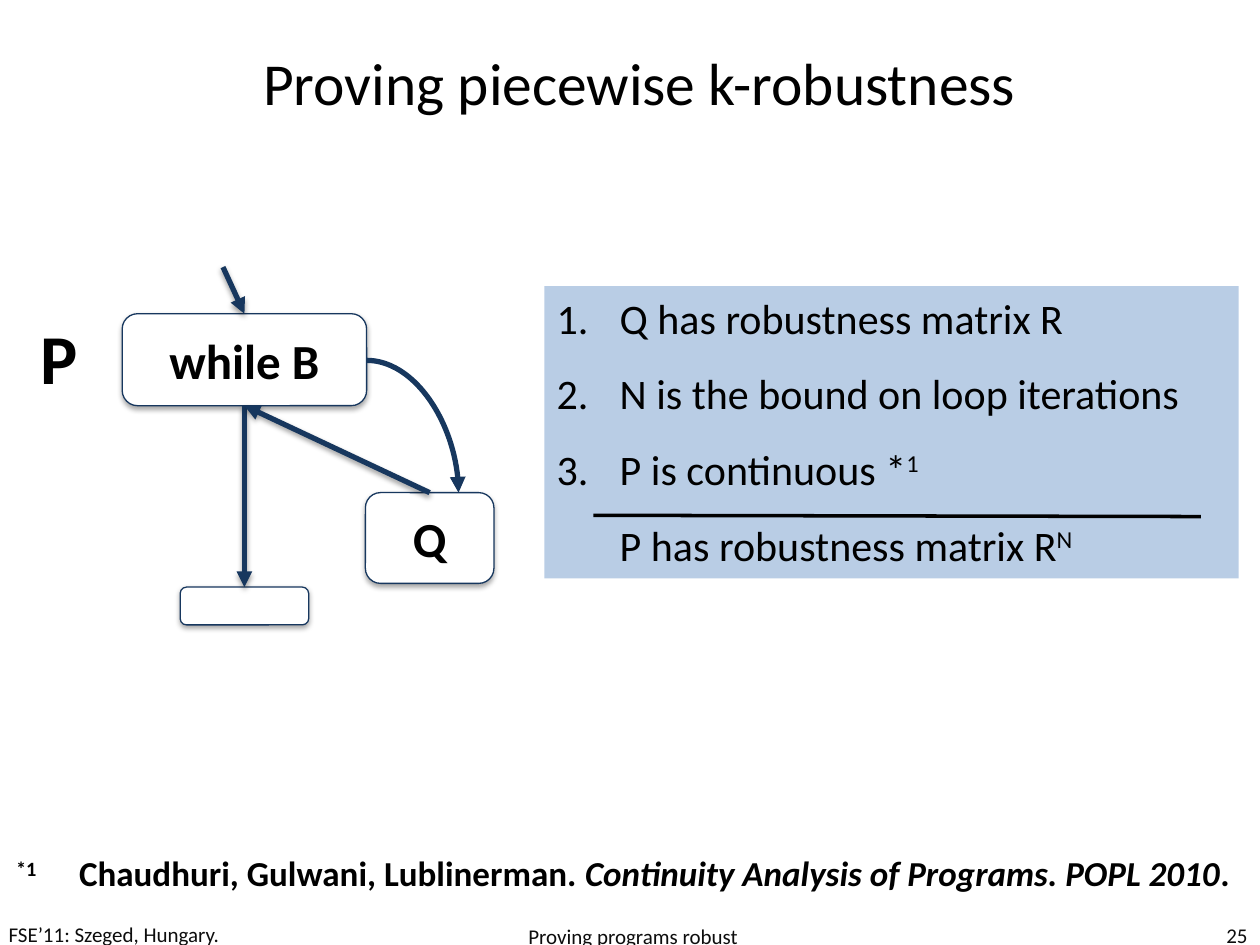
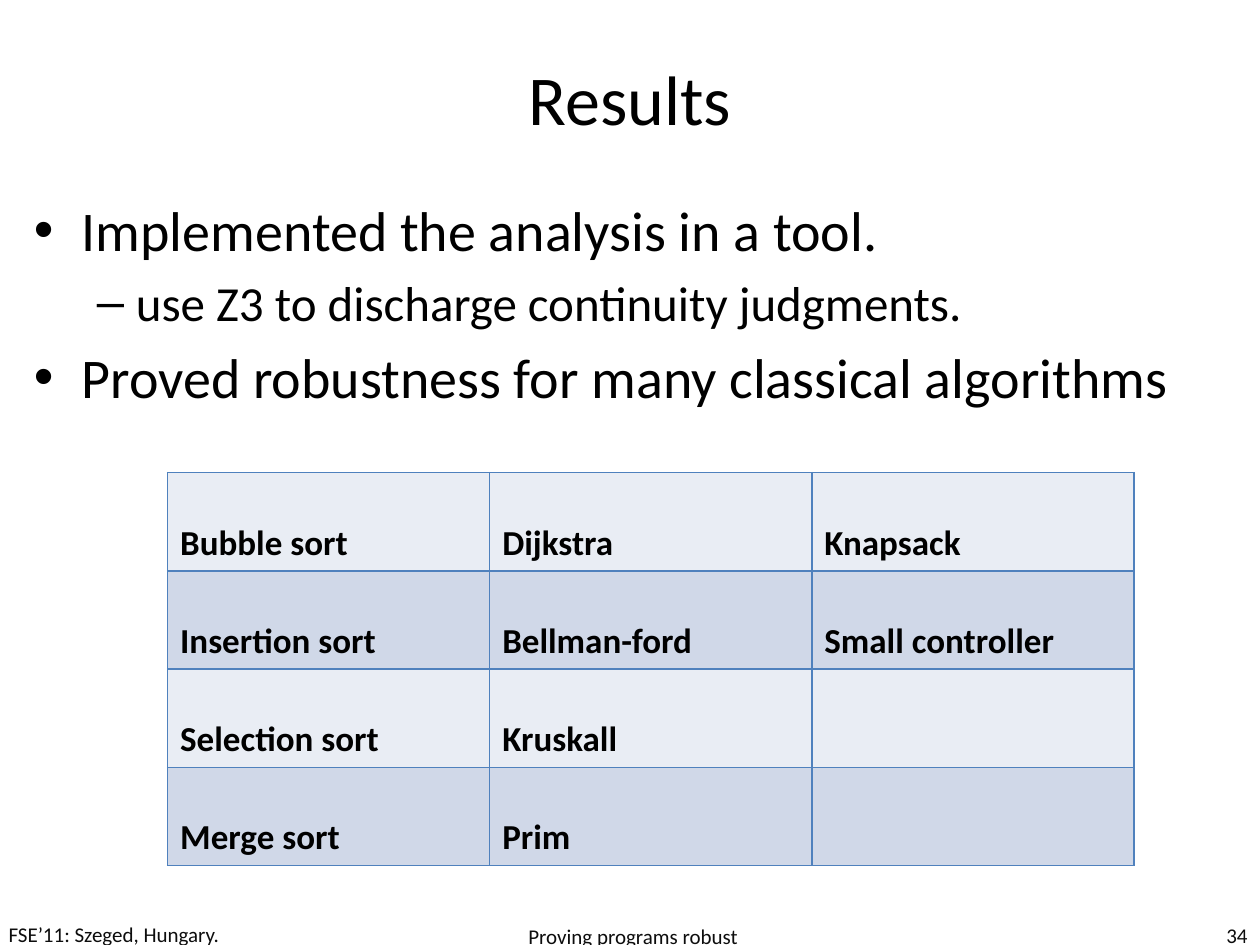
from lxml.etree import SubElement
from pptx import Presentation
from pptx.dml.color import RGBColor
from pptx.enum.shapes import MSO_CONNECTOR as Link, MSO_SHAPE as Shape
from pptx.enum.text import MSO_ANCHOR as Anchor, PP_ALIGN as Align
from pptx.oxml import parse_xml
from pptx.oxml.ns import nsdecls, qn
from pptx.util import Inches, Pt

FONT = "Calibri"
BLACK, WHITE, NAVY = "000000", "FFFFFF", "17375E"
FOOTER_INK, PANEL, GRID = "0D0D0D", "B9CDE5", "4F81BD"
BANDS = ("E9EDF4", "D0D8E8")
SUPER = "30000"
ALGORITHMS = (
    ("Bubble sort", "Dijkstra", "Knapsack"),
    ("Insertion sort", "Bellman-ford", "Small controller"),
    ("Selection sort", "Kruskall", ""),
    ("Merge sort", "Prim", ""),
)


def color(value):
    """Turn a hex string into a colour."""
    return RGBColor.from_string(value)


def style(paragraph, size, bold=False, ink=BLACK, align=Align.LEFT):
    """Set the font and alignment of a paragraph."""
    font = paragraph.font
    font.name, font.size, font.bold = FONT, Pt(size), bold
    font.color.rgb = color(ink)
    paragraph.alignment = align


def add_text(slide, box, text="", size=12, anchor=Anchor.TOP, wrap=True, **look):
    """Add a text box with one styled paragraph and return it."""
    label = slide.shapes.add_textbox(*map(Inches, box))
    frame = label.text_frame
    frame.word_wrap, frame.vertical_anchor = wrap, anchor
    frame.paragraphs[0].text = text
    style(frame.paragraphs[0], size, **look)
    return label


def add_superscript(paragraph, text):
    """Append a raised run to a paragraph."""
    run = paragraph.add_run()
    run.text = text
    run.font._element.set("baseline", SUPER)


def set_indent(paragraph, left, first=0.0, bullet=None, numbered=False):
    """Set a paragraph's indents and its bullet or number."""
    props = paragraph._p.get_or_add_pPr()
    props.set("marL", str(Inches(left)))
    props.set("indent", str(Inches(first)))
    if numbered:
        SubElement(props, qn("a:buAutoNum"), type="arabicPeriod")
    elif bullet:
        SubElement(props, qn("a:buFont"), typeface="Arial")
        SubElement(props, qn("a:buChar"), char=bullet)


def set_shadow(shape, opacity=None):
    """Give a shape a soft drop shadow, or none without an opacity."""
    effects = SubElement(shape._element.spPr, qn("a:effectLst"))
    if opacity:
        shadow = SubElement(effects, qn("a:outerShdw"), blurRad=str(Pt(3.1)),
                            dist=str(Pt(1.7)), dir="5400000", rotWithShape="0")
        ink = SubElement(shadow, qn("a:srgbClr"), val=BLACK)
        SubElement(ink, qn("a:alpha"), val=str(opacity * 1000))


def add_line(slide, start, end, ink=NAVY, width=3, arrow=True, kind=Link.STRAIGHT, shadow=None):
    """Add a connector between two points and return it."""
    line = slide.shapes.add_connector(kind, *map(Inches, (*start, *end)))
    line.line.color.rgb, line.line.width = color(ink), Pt(width)
    if arrow:
        SubElement(line.line._get_or_add_ln(), qn("a:tailEnd"), type="triangle")
    set_shadow(line, shadow)
    return line


def add_node(slide, box, text=""):
    """Add a rounded flowchart node and return it."""
    node = slide.shapes.add_shape(Shape.ROUNDED_RECTANGLE, *map(Inches, box))
    node.fill.solid()
    node.fill.fore_color.rgb = color(WHITE)
    node.line.color.rgb, node.line.width = color(NAVY), Pt(0.75)
    set_shadow(node, 35)
    if text:
        frame = node.text_frame
        frame.vertical_anchor = Anchor.MIDDLE
        frame.margin_left = frame.margin_right = Inches(0.05)
        frame.paragraphs[0].text = text
        style(frame.paragraphs[0], 28, bold=True, align=Align.CENTER)
    return node


def add_title(slide, box, text, size):
    """Add the centred slide title."""
    add_text(slide, box, text, size, Anchor.MIDDLE, align=Align.CENTER)


def add_footer(slide, number):
    """Add venue, talk title and slide number at the bottom."""
    parts = (
        (-0.03, 2.33, 0.17, "FSE’11: Szeged, Hungary.", Align.LEFT),
        (3.44, 3.17, 0.2, "Proving programs robust", Align.CENTER),
        (7.67, 2.33, 0.18, str(number), Align.RIGHT),
    )
    for left, width, height, text, align in parts:
        add_text(slide, (left, 7.33, width, height), text, 12, Anchor.MIDDLE,
                 ink=FOOTER_INK, align=align)


def add_loop_diagram(slide, left, top):
    """Draw the control flow of program P with its loop body Q."""
    def at(x, y, *size):
        return (left + x, top + y, *size)

    loop = add_node(slide, at(0.75, 0.37, 1.94, 0.73), "while B")
    body = add_node(slide, at(2.68, 1.79, 1.02, 0.72), "Q")
    done = add_node(slide, at(1.21, 2.54, 1.02, 0.3))
    add_text(slide, at(0, 0.33, 0.5, 0.77), "P", 40, wrap=False, bold=True, align=Align.CENTER)

    entry = add_line(slide, at(1.55, 0), at(1.72, 0.37), shadow=38)
    entry.end_connect(loop, 0)
    leave = add_line(slide, at(1.72, 1.1), at(1.72, 2.54), shadow=38)
    leave.begin_connect(loop, 2)
    leave.end_connect(done, 0)
    back = add_line(slide, at(3.19, 1.79), at(1.72, 1.1), shadow=38)
    back.begin_connect(body, 0)
    back.end_connect(loop, 2)
    enter_body = add_line(slide, at(2.69, 0.74), at(3.42, 1.79), kind=Link.CURVE)
    enter_body._element.spPr.find(qn("a:prstGeom")).set("prst", "curvedConnector2")


def add_proof_rule(slide, left, top):
    """Draw the panel of premises above the conclusion."""
    panel = add_text(slide, (left, top, 5.51, 2.32))
    panel.fill.solid()
    panel.fill.fore_color.rgb = color(PANEL)
    frame = panel.text_frame
    rows = (
        ("Q has robustness matrix R", "", 1.0, True),
        ("N is the bound on loop iterations", "", 1.5, True),
        ("P is continuous *", "1", 1.5, True),
        ("P has robustness matrix R", "N", 1.5, False),
    )
    for index, (text, raised, spacing, premise) in enumerate(rows):
        line = frame.add_paragraph() if index else frame.paragraphs[0]
        line.text = text
        style(line, 24)
        line.line_spacing = spacing
        set_indent(line, 0.5, -0.5 if premise else 0, numbered=premise)
        if raised:
            add_superscript(line, raised)
    add_line(slide, (left + 0.39, top + 1.82), (left + 5.21, top + 1.83), BLACK, 2, arrow=False)


def add_citation(slide, box):
    """Add the reference for the continuity premise."""
    line = add_text(slide, box, size=20, bold=True).text_frame.paragraphs[0]
    set_indent(line, 0.5, -0.5)
    add_superscript(line, "*1")
    for text, italic in (("\tChaudhuri, Gulwani, Lublinerman. ", False),
                         ("Continuity Analysis of Programs. POPL 2010", True),
                         (".", False)):
        run = line.add_run()
        run.text, run.font.italic = text, italic


def add_findings(slide, box):
    """Add the bulleted findings."""
    frame = add_text(slide, box).text_frame
    rows = (
        ("Implemented the analysis in a tool.", 32, 0.38, -0.38, "•"),
        ("use Z3 to discharge continuity judgments.", 28, 0.81, -0.31, "–"),
        ("Proved robustness for many classical algorithms", 32, 0.38, -0.38, "•"),
    )
    for index, (text, size, left, first, bullet) in enumerate(rows):
        line = frame.add_paragraph() if index else frame.paragraphs[0]
        line.text = text
        style(line, size)
        line.space_before = Pt(size * 0.2)
        set_indent(line, left, first, bullet)


def add_borders(cell):
    """Draw thin lines on all four sides of a cell."""
    props = cell._tc.get_or_add_tcPr()
    for side in "LRTB":
        props.append(parse_xml(
            f'<a:ln{side} {nsdecls("a")} w="{Pt(1)}"><a:solidFill>'
            f'<a:srgbClr val="{GRID}"/></a:solidFill></a:ln{side}>'))


def add_algorithm_table(slide, left, top, width, row_height):
    """Add the table of algorithms proved robust."""
    count = len(ALGORITHMS)
    table = slide.shapes.add_table(count, len(ALGORITHMS[0]), *map(
        Inches, (left, top, width, row_height * count))).table
    table.first_row = table.horz_banding = False
    for row, names in enumerate(ALGORITHMS):
        for column, name in enumerate(names):
            cell = table.cell(row, column)
            add_borders(cell)
            cell.fill.solid()
            cell.fill.fore_color.rgb = color(BANDS[row % 2])
            cell.vertical_anchor = Anchor.MIDDLE
            line = cell.text_frame.paragraphs[0]
            line.text = name
            style(line, 20, bold=True)
            if name:
                line.line_spacing = 2.0


def build_proof_slide(slide):
    """Fill the slide on proving piecewise k-robustness."""
    add_title(slide, (0.5, 0.17, 9.15, 0.95), "Proving piecewise k-robustness", 34)
    add_loop_diagram(slide, 0.22, 2.12)
    add_proof_rule(slide, 4.32, 2.27)
    add_footer(slide, 25)
    add_citation(slide, (0.03, 6.71, 10, 0.77))


def build_results_slide(slide):
    """Fill the slide on results."""
    add_title(slide, (0.5, 0.3, 9, 0.95), "Results", 40)
    add_findings(slide, (0.17, 1.5, 9.83, 5.2))
    add_footer(slide, 34)
    add_algorithm_table(slide, 1.33, 3.75, 7.67, 0.78)


def main():
    """Build and save the presentation."""
    deck = Presentation()
    deck.slide_width, deck.slide_height = Inches(10), Inches(7.5)
    for build in (build_proof_slide, build_results_slide):
        build(deck.slides.add_slide(deck.slide_layouts[6]))
    deck.save("out.pptx")


if __name__ == "__main__":
    main()
